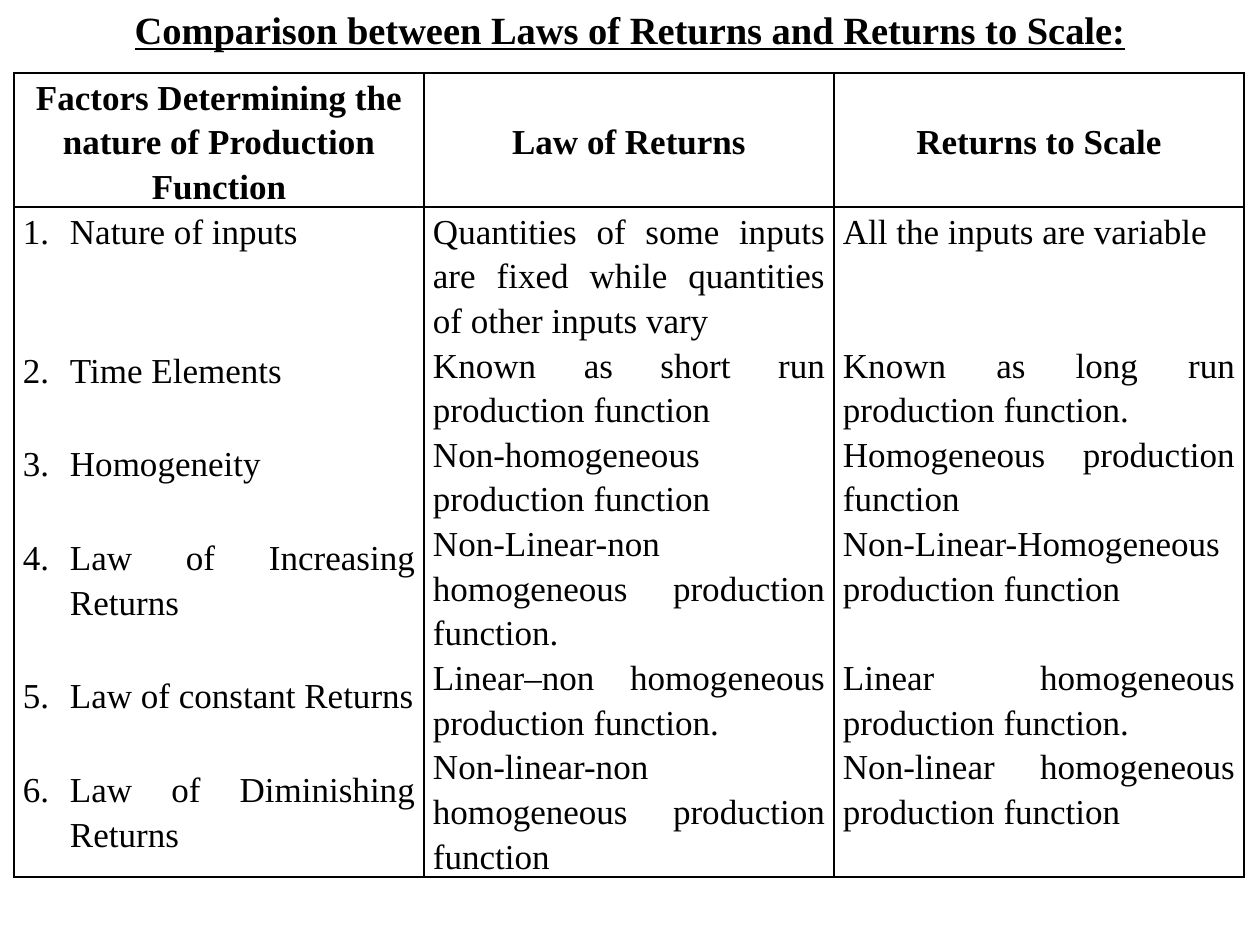
from lxml.etree import SubElement
from pptx import Presentation
from pptx.dml.color import RGBColor
from pptx.enum.text import MSO_ANCHOR, MSO_AUTO_SIZE, PP_ALIGN
from pptx.oxml import parse_xml
from pptx.oxml.ns import nsdecls, qn
from pptx.util import Pt

TITLE = "Comparison between Laws of Returns and Returns to Scale:"
HEADS = [
    "Factors Determining the nature of Production Function",
    "Law of Returns",
    "Returns to Scale",
]
BODY = [
    [
        ("Nature of inputs", 0),
        ("Time Elements", 54),
        ("Homogeneity", 28),
        ("Law of Increasing Returns", 28),
        ("Law of constant Returns", 28),
        ("Law of Diminishing Returns", 28),
    ],
    [
        ("Quantities of some inputs are fixed while quantities of other inputs vary", 0),
        ("Known as short run production function", 0),
        ("Non-homogeneous production function", 0),
        ("Non-Linear-non homogeneous production function.", 0),
        ("Linear–non homogeneous production function.", 0),
        ("Non-linear-non homogeneous production function", 0),
    ],
    [
        ("All the inputs are variable", 0),
        ("Known as long run production function.", 51),
        ("Homogeneous production function", 0),
        ("Non-Linear-Homogeneous production function", 0),
        ("Linear homogeneous production function.", 25.5),
        ("Non-linear homogeneous production function", 0),
    ],
]
COLORS = {"ink": "000000"}
FONT = "Times New Roman"
WIDE, HIGH = 1260, 945
LEFT, TOP, COL = 14, 73, 410
ROWS = [134, 670]
PAD, INDENT = 9, 47


def px(n):
    return n * 914400 // 126


def style(para, size, bold=False, line=False):
    for run in para.runs:
        font = run.font
        font.name, font.size = FONT, Pt(size)
        font.bold, font.underline = bold, line
        font.color.rgb = RGBColor.from_string(COLORS["ink"])


def number(para):
    props = para._p.get_or_add_pPr()
    props.set("marL", str(px(INDENT)))
    props.set("indent", str(-px(INDENT)))
    SubElement(props, qn("a:buFont"), typeface="+mj-lt")
    SubElement(props, qn("a:buAutoNum"), type="arabicPeriod")


def border(cell):
    props = cell._tc.get_or_add_tcPr()
    for i, side in enumerate("LRTB"):
        props.insert(i, parse_xml(
            f'<a:ln{side} {nsdecls("a")} w="12700"><a:solidFill>'
            f'<a:srgbClr val="{COLORS["ink"]}"/></a:solidFill></a:ln{side}>'))


def fill(cell, items, head):
    cell.margin_left = cell.margin_right = px(PAD)
    cell.margin_top = cell.margin_bottom = 0
    cell.vertical_anchor = MSO_ANCHOR.MIDDLE if head else MSO_ANCHOR.TOP
    cell.fill.background()
    border(cell)
    frame = cell.text_frame
    frame.text = "\n".join(text for text, gap in items)
    for para, (text, gap) in zip(frame.paragraphs, items):
        para.alignment = PP_ALIGN.CENTER if head else PP_ALIGN.JUSTIFY
        para.line_spacing = 1.15
        para.space_before = Pt(gap)
        style(para, 20, bold=head)


deck = Presentation()
deck.slide_width, deck.slide_height = px(WIDE), px(HIGH)
slide = deck.slides.add_slide(deck.slide_layouts[5])

title = slide.shapes.title
title.left, title.top, title.width, title.height = 0, 0, px(WIDE), px(59)
frame = title.text_frame
frame.text = TITLE
frame.word_wrap = True
frame.auto_size = MSO_AUTO_SIZE.NONE
frame.vertical_anchor = MSO_ANCHOR.MIDDLE
frame.paragraphs[0].alignment = PP_ALIGN.CENTER
style(frame.paragraphs[0], 22, bold=True, line=True)

table = slide.shapes.add_table(
    2, len(HEADS), px(LEFT), px(TOP), px(COL * len(HEADS)), px(sum(ROWS))).table
table.first_row = table.horz_banding = False
for row, high in zip(table.rows, ROWS):
    row.height = px(high)
for i, (head, items) in enumerate(zip(HEADS, BODY)):
    table.columns[i].width = px(COL)
    fill(table.cell(0, i), [(head, 0)], True)
    fill(table.cell(1, i), items, False)
for para in table.cell(1, 0).text_frame.paragraphs:
    number(para)

deck.save("out.pptx")
